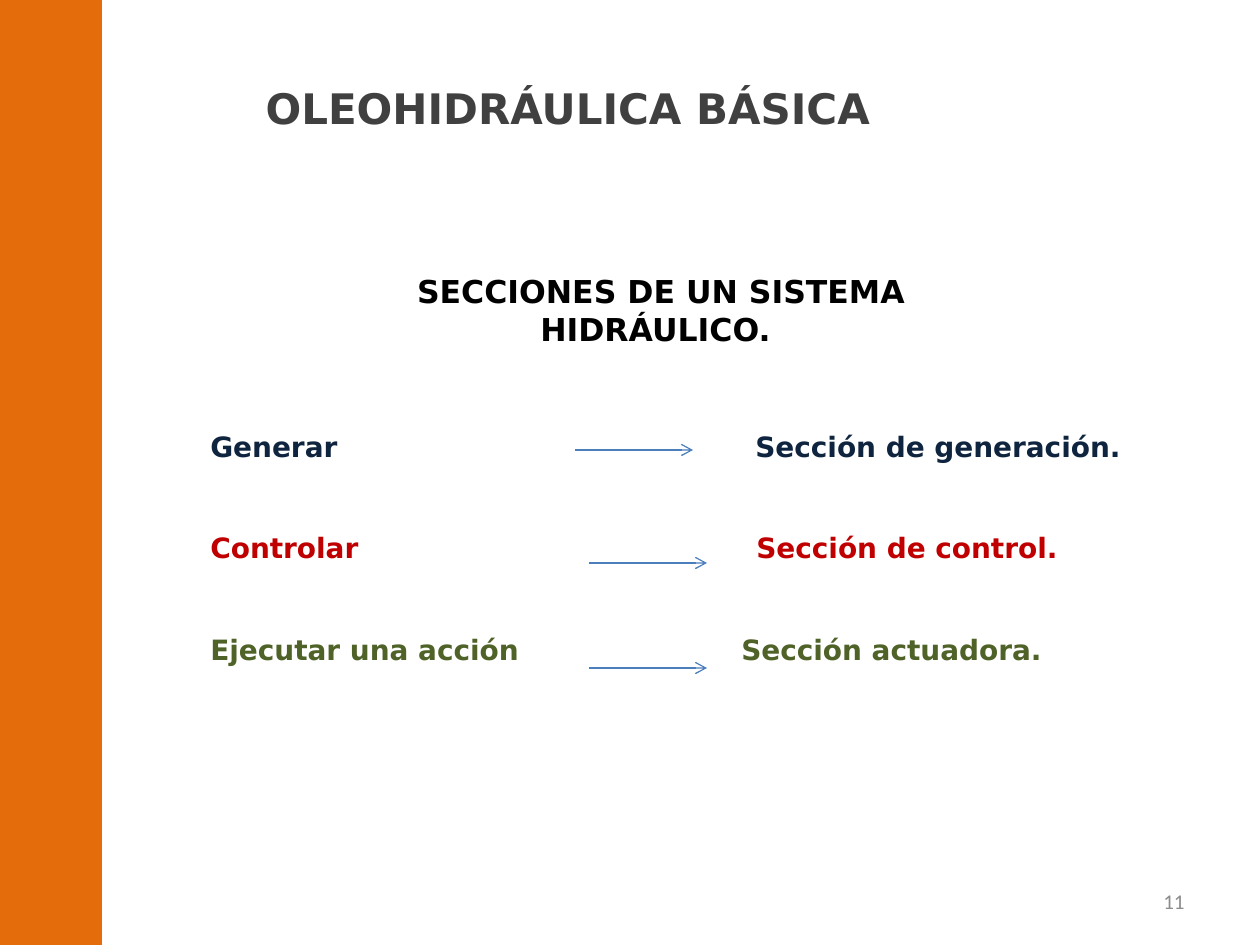
from lxml import etree
from pptx import Presentation
from pptx.dml.color import RGBColor
from pptx.enum.shapes import MSO_CONNECTOR, MSO_SHAPE
from pptx.enum.text import MSO_ANCHOR, MSO_AUTO_SIZE, PP_ALIGN
from pptx.oxml.ns import qn
from pptx.util import Emu, Pt

STRAIGHT = MSO_CONNECTOR.STRAIGHT
RECTANGLE = MSO_SHAPE.RECTANGLE
TOP, MIDDLE = MSO_ANCHOR.TOP, MSO_ANCHOR.MIDDLE
LEFT, CENTER, RIGHT = PP_ALIGN.LEFT, PP_ALIGN.CENTER, PP_ALIGN.RIGHT

PX_PER_INCH = 126
BODY_FONT = "DejaVu Sans"
TITLE_ONLY = 5

# function, section, colour, tab position of the section
ROWS = [
    ("Generar", "Sección de generación.", "0F243E", 545),
    ("Controlar", "Sección de control.", "C00000", 546),
    ("Ejecutar una acción", "Sección actuadora.", "4F6228", 531),
]
ARROW_STARTS = [(575, 450), (589, 563), (589, 668)]
ARROW_LENGTH = 118


def px(length):
    return Emu(round(length * 914400 / PX_PER_INCH))


def color(hex_string):
    return RGBColor.from_string(hex_string)


def place(shape, left, top, width, height):
    shape.left, shape.top = px(left), px(top)
    shape.width, shape.height = px(width), px(height)


def prepare_frame(shape, anchor=TOP):
    frame = shape.text_frame
    frame.word_wrap = True
    frame.auto_size = MSO_AUTO_SIZE.NONE
    frame.vertical_anchor = anchor
    return frame


def add_text_box(slide, left, top, width, height, anchor=TOP):
    box = slide.shapes.add_textbox(px(left), px(top), px(width), px(height))
    return prepare_frame(box, anchor)


def write(paragraph, text, size=18, fill="000000", font=BODY_FONT,
          bold=True, align=LEFT, before=0):
    paragraph.alignment = align
    paragraph.space_before = Pt(before)
    run = paragraph.add_run()
    run.text = text
    run.font.name = font
    run.font.size = Pt(size)
    run.font.bold = bold
    run.font.color.rgb = color(fill)


def add_tab_stop(paragraph, position):
    properties = paragraph._p.get_or_add_pPr()
    tabs = etree.SubElement(properties, qn("a:tabLst"))
    etree.SubElement(tabs, qn("a:tab"), pos=str(px(position)), algn="l")


def add_side_bar(slide):
    bar = slide.shapes.add_shape(RECTANGLE, px(-2), 0, px(104), px(945))
    bar.shadow.inherit = False
    bar.fill.solid()
    bar.fill.fore_color.rgb = color("E46C0A")
    bar.line.fill.background()


def add_title(slide, text):
    title = slide.shapes.title
    place(title, 253, 76, 764, 63)
    frame = prepare_frame(title)
    write(frame.paragraphs[0], text, size=24, fill="404040")


def add_sections(slide):
    frame = add_text_box(slide, 198, 423, 948, 251)
    for index, (function, section, fill, tab) in enumerate(ROWS):
        paragraph = frame.add_paragraph() if index else frame.paragraphs[0]
        add_tab_stop(paragraph, tab)
        write(paragraph, f"{function}\t{section}", size=16, fill=fill,
              before=38.8 if index else 0)


def add_arrow(slide, left, top):
    arrow = slide.shapes.add_connector(
        STRAIGHT, px(left), px(top), px(left + ARROW_LENGTH), px(top))
    arrow.line.color.rgb = color("4B7EBC")
    arrow.line.width = Pt(0.75)
    etree.SubElement(arrow.line._get_or_add_ln(), qn("a:tailEnd"), type="arrow")
    etree.SubElement(arrow._element.spPr, qn("a:effectLst"))


def main():
    presentation = Presentation()
    presentation.slide_width, presentation.slide_height = px(1260), px(945)
    slide = presentation.slides.add_slide(
        presentation.slide_layouts[TITLE_ONLY])

    add_side_bar(slide)
    add_title(slide, "OLEOHIDRÁULICA BÁSICA")
    heading = add_text_box(slide, 290, 266, 742, 90)
    write(heading.paragraphs[0], "SECCIONES DE UN SISTEMA HIDRÁULICO. ",
          align=CENTER)
    add_sections(slide)
    for left, top in ARROW_STARTS:
        add_arrow(slide, left, top)
    page_number = add_text_box(slide, 903, 876, 294, 50, anchor=MIDDLE)
    write(page_number.paragraphs[0], "11", size=12, fill="8C8C8C",
          font="Calibri", bold=False, align=RIGHT)

    presentation.save("out.pptx")


if __name__ == "__main__":
    main()
